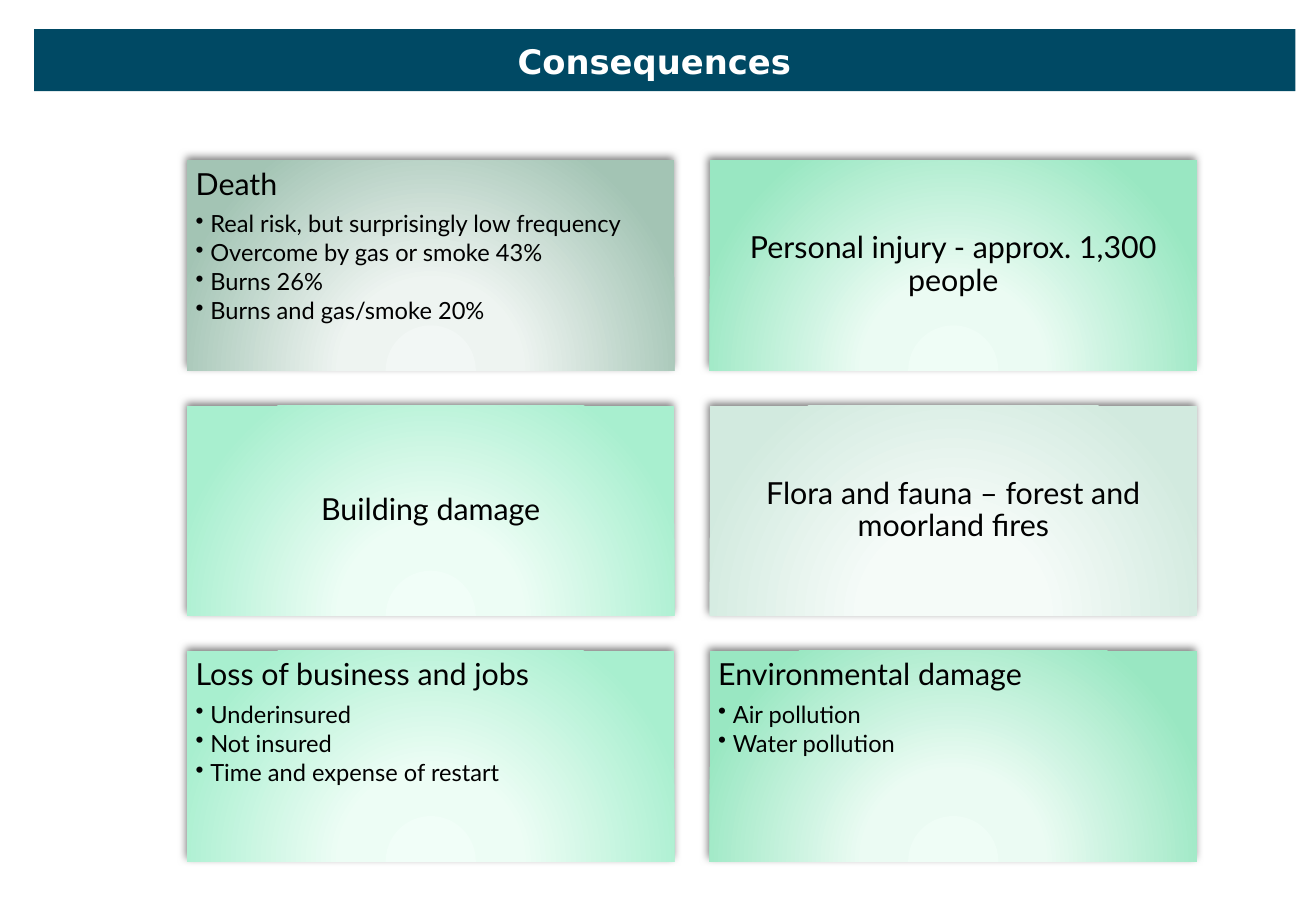
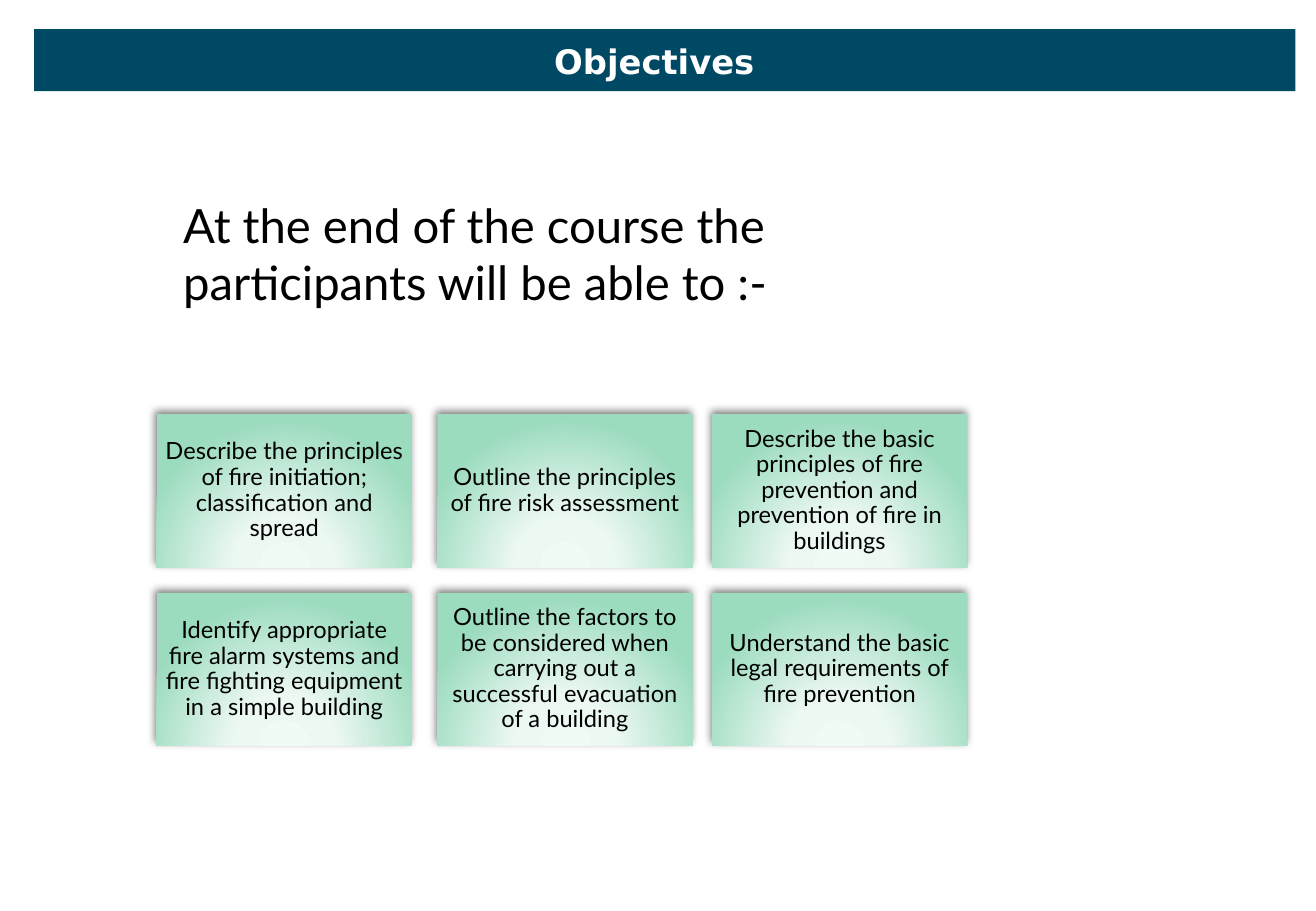
from pptx import Presentation
from pptx.dml.color import RGBColor
from pptx.enum.shapes import MSO_SHAPE
from pptx.enum.text import MSO_ANCHOR, MSO_AUTO_SIZE, PP_ALIGN
from pptx.oxml import parse_xml
from pptx.oxml.ns import nsdecls, qn
from pptx.util import Emu, Pt

RECT = MSO_SHAPE.RECTANGLE
TOP, MIDDLE = MSO_ANCHOR.TOP, MSO_ANCHOR.MIDDLE
LEFT, CENTER = PP_ALIGN.LEFT, PP_ALIGN.CENTER
GROW = MSO_AUTO_SIZE.SHAPE_TO_FIT_TEXT

EMU_PER_PX = 9144  # 100 px to the inch
SLIDE_W, SLIDE_H = 1083, 750
BODY_FONT, TITLE_FONT = "Lato", "DejaVu Sans"
COLORS = {"band": "004964", "title": "FFFFFF", "text": "000000", "shadow": "000000"}

# Card gradients: centre, inner ring, edge
GRADIENTS = {
    "sage": ("F2F7F5", "EEF4F1", "A3C4B4"),
    "green": ("EFFDF6", "EBFBF3", "99E7C2"),
    "mint": ("F1FEF8", "EDFDF5", "A8EFCF"),
    "pale": ("F7FCFA", "F5FBF8", "D2EADF"),
    "jade": ("F0FBF6", "ECF8F2", "9BDBBE"),
}
GRADIENT_STOPS = (0, 34, 100)

# Heading, bullets, gradient
CONSEQUENCES = [
    ("Death", ["Real risk, but surprisingly low frequency",
               "Overcome by gas or smoke 43%",
               "Burns 26%",
               "Burns and gas/smoke 20%"], "sage"),
    ("Personal injury - approx. 1,300 people", [], "green"),
    ("Building damage", [], "mint"),
    ("Flora and fauna – forest and moorland fires", [], "pale"),
    ("Loss of business and jobs", ["Underinsured", "Not insured",
                                   "Time and expense of restart"], "mint"),
    ("Environmental damage", ["Air pollution", "Water pollution"], "green"),
]
OBJECTIVES = [
    "Describe the principles of fire initiation; classification and spread",
    "Outline the principles of fire risk assessment",
    "Describe the basic principles of fire prevention and prevention of fire in buildings",
    "Identify appropriate fire alarm systems and fire fighting equipment in a simple building",
    "Outline the factors to be considered when carrying out a successful evacuation of a building",
    "Understand the basic legal requirements of fire prevention",
]


def px(value):
    return Emu(value * EMU_PER_PX)


def style_text(paragraph, size, color="text", font=BODY_FONT, bold=False):
    for run in paragraph.runs:
        run.font.size = Pt(size)
        run.font.name = font
        run.font.bold = bold
        run.font.color.rgb = RGBColor.from_string(COLORS[color])


def add_rect(slide, left, top, width, height):
    rect = slide.shapes.add_shape(RECT, px(left), px(top), px(width), px(height))
    rect.shadow.inherit = False
    rect.line.fill.background()
    return rect


def add_text(slide, left, top, width, height, text, wrap=True):
    box = slide.shapes.add_textbox(px(left), px(top), px(width), px(height))
    box.text_frame.word_wrap = wrap
    box.text_frame.auto_size = GROW
    box.text_frame.text = text
    return box.text_frame.paragraphs[0]


def add_header(slide, title):
    band = add_rect(slide, 28, 24, 1038, 51)
    band.fill.solid()
    band.fill.fore_color.rgb = RGBColor.from_string(COLORS["band"])
    heading = add_text(slide, 416, 29, 245, 44, title, wrap=False)
    heading.alignment = CENTER
    style_text(heading, 20, "title", TITLE_FONT, bold=True)


def apply_glow_fill(card, gradient):
    """Circular gradient rising from below the card, with a soft shadow."""
    stops = "".join(
        f'<a:gs pos="{pos * 1000}"><a:srgbClr val="{color}"/></a:gs>'
        for pos, color in zip(GRADIENT_STOPS, GRADIENTS[gradient]))
    fill = parse_xml(
        f'<a:gradFill {nsdecls("a")} rotWithShape="1"><a:gsLst>{stops}</a:gsLst>'
        '<a:path path="circle"><a:fillToRect l="50000" t="155000" r="50000" b="-55000"/>'
        '</a:path></a:gradFill>')
    shadow = parse_xml(
        f'<a:outerShdw {nsdecls("a")} blurRad="{Pt(5)}" dist="{Pt(2)}" '
        f'dir="{245 * 60000}" rotWithShape="0"><a:srgbClr val="{COLORS["shadow"]}">'
        '<a:alpha val="50000"/></a:srgbClr></a:outerShdw>')
    properties = card.element.spPr
    properties.find(qn("a:prstGeom")).addnext(fill)
    properties.find(qn("a:effectLst")).append(shadow)


def make_bullet(paragraph):
    properties = paragraph._p.get_or_add_pPr()
    properties.set("marL", str(px(12)))
    properties.set("indent", str(px(-12)))
    properties.append(parse_xml(f'<a:buChar {nsdecls("a")} char="•"/>'))
    paragraph.level = 1


def add_card(slide, bounds, heading, bullets, gradient, size, inset):
    card = add_rect(slide, *bounds)
    apply_glow_fill(card, gradient)
    frame = card.text_frame
    frame.word_wrap = True
    frame.margin_left = frame.margin_right = px(inset)
    frame.margin_top = frame.margin_bottom = px(inset)
    frame.vertical_anchor = TOP if bullets else MIDDLE
    frame.text = "\n".join([heading, *bullets])
    for index, paragraph in enumerate(frame.paragraphs):
        is_bullet = index > 0
        text_size = 14 if is_bullet else size
        if is_bullet:
            make_bullet(paragraph)
        paragraph.alignment = LEFT if bullets else CENTER
        paragraph.line_spacing = 0.9
        paragraph.space_after = Pt(text_size * (0.15 if is_bullet else 0.35))
        style_text(paragraph, text_size)


def add_card_grid(slide, cards, lefts, top, row_pitch, width, height, size, inset):
    for index, (heading, bullets, gradient) in enumerate(cards):
        row, column = divmod(index, len(lefts))
        bounds = (lefts[column], top + row * row_pitch, width, height)
        add_card(slide, bounds, heading, bullets, gradient, size, inset)


def main():
    prs = Presentation()
    prs.slide_width, prs.slide_height = px(SLIDE_W), px(SLIDE_H)
    blank = prs.slide_layouts[6]

    # Consequences
    consequences = prs.slides.add_slide(blank)
    add_header(consequences, "Consequences")
    add_card_grid(consequences, CONSEQUENCES, lefts=(154, 584), top=132,
                  row_pitch=202, width=401, height=173, size=18, inset=7)

    # Objectives
    objectives = prs.slides.add_slide(blank)
    add_header(objectives, "Objectives")
    intro = add_text(objectives, 141, 157, 696, 104,
                     "At the end of the course the participants will be able to :-")
    style_text(intro, 28)
    add_card_grid(objectives, [(text, [], "jade") for text in OBJECTIVES],
                  lefts=(129, 360, 586), top=341, row_pitch=147,
                  width=210, height=126, size=14, inset=6)

    prs.save("out.pptx")


if __name__ == "__main__":
    main()
